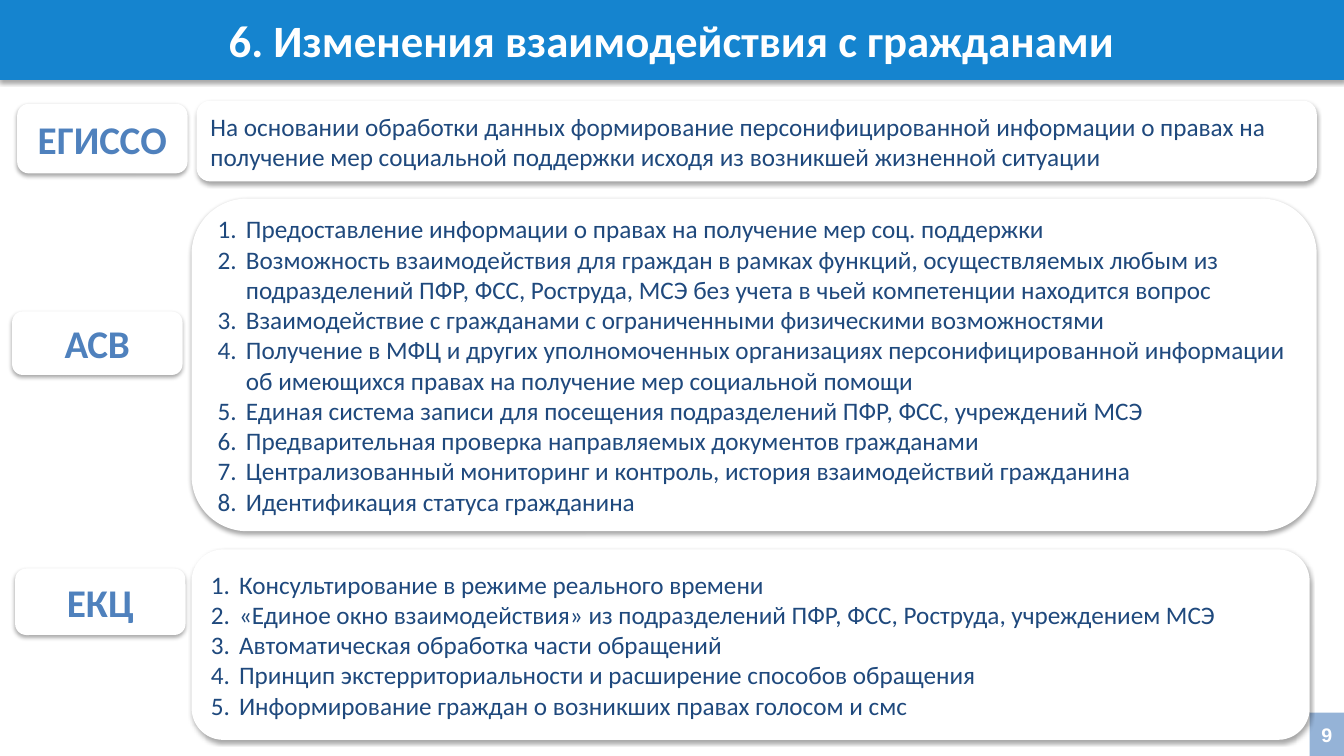
"""Build the slide on changes in interaction with citizens."""
from lxml.etree import SubElement
from pptx import Presentation
from pptx.dml.color import RGBColor
from pptx.enum.shapes import MSO_SHAPE
from pptx.enum.text import MSO_ANCHOR, PP_ALIGN
from pptx.oxml.ns import qn
from pptx.util import Inches, Pt

WHITE = RGBColor(0xFF, 0xFF, 0xFF)
BLUE = RGBColor(0x15, 0x84, 0xCF)
PALE_BLUE = RGBColor(0x95, 0xB3, 0xD7)
LABEL_BLUE = RGBColor(0x4F, 0x81, 0xBD)
NAVY = RGBColor(0x1F, 0x49, 0x7D)

SECTIONS = [
    ("ЕГИССО", (0.17, 1.03, 1.69, 0.69), (1.95, 1, 11.11, 0.8), [
        "На основании обработки данных формирование персонифицированной информации о правах на "
        "получение мер социальной поддержки исходя из возникшей жизненной ситуации",
    ]),
    ("АСВ", (0.12, 3.09, 1.69, 0.63), (1.9, 1.97, 11.16, 3.3), [
        "Предоставление информации о правах на получение мер соц. поддержки",
        "Возможность взаимодействия для граждан в рамках функций, осуществляемых любым из "
        "подразделений ПФР, ФСС, Роструда, МСЭ без учета в чьей компетенции находится вопрос",
        "Взаимодействие с гражданами с ограниченными физическими возможностями",
        "Получение в МФЦ и других уполномоченных организациях персонифицированной информации "
        "об имеющихся правах на получение мер социальной помощи",
        "Единая система записи для посещения подразделений ПФР, ФСС, учреждений МСЭ",
        "Предварительная проверка направляемых документов гражданами",
        "Централизованный мониторинг и контроль, история взаимодействий гражданина",
        "Идентификация статуса гражданина",
    ]),
    ("ЕКЦ", (0.15, 5.64, 1.69, 0.66), (1.9, 5.45, 11.09, 1.89), [
        "Консультирование в режиме реального времени",
        "«Единое окно взаимодействия» из подразделений ПФР, ФСС, Роструда, учреждением МСЭ",
        "Автоматическая обработка части обращений",
        "Принцип экстерриториальности и расширение способов обращения",
        "Информирование граждан о возникших правах голосом и смс",
    ]),
]


def add_box(kind, box, fill, shadow=True):
    sp = s.shapes.add_shape(kind, *[Inches(v) for v in box])
    sp.fill.solid()
    sp.fill.fore_color.rgb = fill
    sp.line.fill.background()
    sp.shadow.inherit = False
    if shadow:
        effects = sp._element.spPr.find(qn("a:effectLst"))
        outer = SubElement(effects, qn("a:outerShdw"), blurRad="40000", dist="23000",
                           dir="5400000", rotWithShape="0")
        black = SubElement(outer, qn("a:srgbClr"), val="000000")
        SubElement(black, qn("a:alpha"), val="35000")
    return sp


def add_text(sp, lines, size, color, bold=True, align=PP_ALIGN.CENTER, font="Calibri"):
    tf = sp.text_frame
    tf.word_wrap = True
    tf.vertical_anchor = MSO_ANCHOR.MIDDLE
    for i, line in enumerate(lines):
        p = tf.add_paragraph() if i else tf.paragraphs[0]
        p.alignment = align
        if len(lines) > 1:
            pPr = p._p.get_or_add_pPr()
            pPr.set("marL", str(Inches(0.28)))
            pPr.set("indent", str(-Inches(0.28)))
            SubElement(pPr, qn("a:buFont"), typeface="+mj-lt")
            SubElement(pPr, qn("a:buAutoNum"), type="arabicPeriod")
        r = p.add_run()
        r.text = line
        r.font.size = Pt(size)
        r.font.name = font
        r.font.bold = bold
        r.font.color.rgb = color


prs = Presentation()
prs.slide_width = Inches(13.33)
prs.slide_height = Inches(7.5)
s = prs.slides.add_slide(prs.slide_layouts[6])

title = add_box(MSO_SHAPE.RECTANGLE, (0, -0.01, 13.33, 0.8), BLUE)
title.line.color.rgb = BLUE
title.line.width = Pt(0.75)
add_text(title, ["6. Изменения взаимодействия с гражданами"], 32, WHITE)

page = add_box(MSO_SHAPE.RECTANGLE, (12.99, 7.07, 0.34, 0.43), PALE_BLUE, shadow=False)
page.text_frame.margin_top = page.text_frame.margin_bottom = Inches(0.1)
add_text(page, ["9"], 14, WHITE, font="Arial")

for name, label_box, card_box, lines in SECTIONS:
    label = add_box(MSO_SHAPE.ROUNDED_RECTANGLE, label_box, WHITE)
    add_text(label, [name], 28, LABEL_BLUE)
    card = add_box(MSO_SHAPE.ROUNDED_RECTANGLE, card_box, WHITE)
    add_text(card, lines, 18, NAVY, bold=False, align=PP_ALIGN.LEFT)

prs.save("out.pptx")
